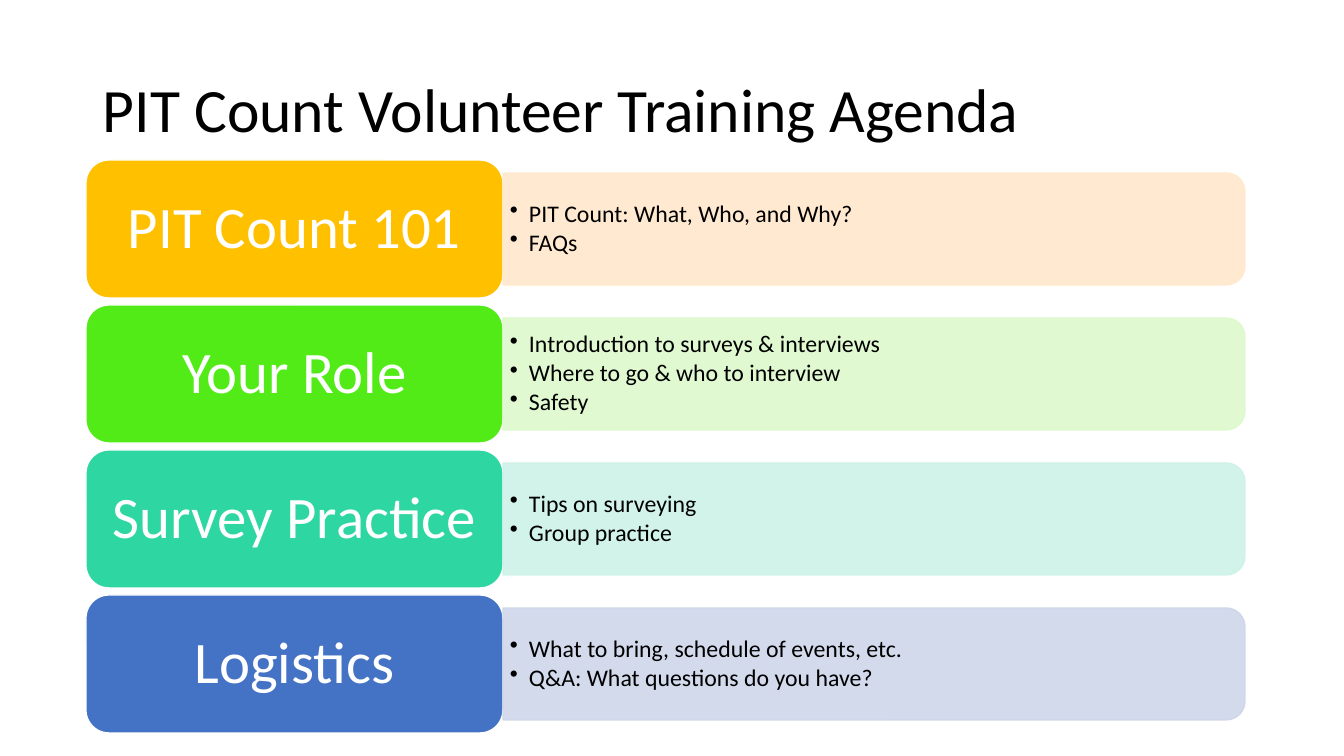
import pptx
import pptx.util
import pptx.dml.color
import pptx.enum.shapes
import pptx.enum.text
import pptx.oxml.ns
from lxml import etree

# Content
TITLE = "PIT Count Volunteer Training Agenda"
ROWS = [
    ("PIT Count 101", "gold", ["PIT Count: What, Who, and Why?", "FAQs"]),
    ("Your Role", "green", ["Introduction to surveys & interviews",
                            "Where to go & who to interview", "Safety"]),
    ("Survey Practice", "teal", ["Tips on surveying", "Group practice"]),
    ("Logistics", "blue", ["What to bring, schedule of events, etc.",
                           "Q&A: What questions do you have?"]),
]
COLORS = {
    "black": "000000", "white": "FFFFFF",
    "gold": "FFC000", "gold pale": "FFE8CC",
    "green": "53EB17", "green pale": "DDF9CC",
    "teal": "2ED7A1", "teal pale": "CDF2E7",
    "blue": "4472C4", "blue pale": "CFD6EA",
}
FONT = "Calibri"

# Layout in px
WIDE, HIGH = 1344, 756
TOP, STEP = 160, 145
LABEL_X, LABEL_W, LABEL_H = 86, 417, 138
BAR_X, BAR_W, BAR_H = LABEL_X + LABEL_W, 742, 112
LIST_W, LIST_H = 737, 100
INDENT = 19

KIND = pptx.enum.shapes.MSO_SHAPE
ALIGN = pptx.enum.text.PP_ALIGN


def px(n):
    return pptx.util.Emu(round(n * 914400 / 100.8))


def rgb(name):
    return pptx.dml.color.RGBColor.from_string(COLORS[name])


def add_box(kind, x, y, w, h, fill, line):
    box = slide.shapes.add_shape(kind, px(x), px(y), px(w), px(h))
    box.shadow.inherit = False
    box.fill.solid()
    box.fill.fore_color.rgb = rgb(fill)
    box.line.color.rgb = rgb(line)
    box.line.width = pptx.util.Pt(1)
    return box


def add_text(x, y, w, h):
    return slide.shapes.add_textbox(px(x), px(y), px(w), px(h))


def set_text(shape, lines, size, color, align, pad):
    frame = shape.text_frame
    frame.word_wrap = True
    frame.vertical_anchor = pptx.enum.text.MSO_ANCHOR.MIDDLE
    frame.margin_left = frame.margin_right = px(pad[0])
    frame.margin_top = frame.margin_bottom = px(pad[1])
    frame.text = "\n".join(lines)
    for para in frame.paragraphs:
        para.alignment = align
        para.line_spacing = 0.9
        font = para.runs[0].font
        font.name, font.size = FONT, pptx.util.Pt(size)
        font.color.rgb = rgb(color)
    return frame.paragraphs


def add_bullet(para):
    para.space_after = pptx.util.Pt(2.2)
    props = para._p.get_or_add_pPr()
    props.set("marL", str(px(INDENT)))
    props.set("indent", str(-px(INDENT)))
    mark = etree.SubElement(props, pptx.oxml.ns.qn("a:buChar"))
    mark.set("char", "•")


def set_alpha(part):
    # Applies 90% opacity to each solid colour in the shape properties
    for tint in part.iter(pptx.oxml.ns.qn("a:srgbClr")):
        alpha = etree.SubElement(tint, pptx.oxml.ns.qn("a:alpha"))
        alpha.set("val", "90000")


deck = pptx.Presentation()
deck.slide_width, deck.slide_height = px(WIDE), px(HIGH)
slide = deck.slides.add_slide(deck.slide_layouts[6])

# Title
set_text(add_text(93, 40, 1159, 146), [TITLE], 44, "black", ALIGN.LEFT, (10, 5))

# Agenda rows
for i, (name, color, points) in enumerate(ROWS):
    top = TOP + i * STEP
    mid = top + LABEL_H / 2
    pale = color + " pale"

    # Label
    label = add_box(KIND.ROUNDED_RECTANGLE, LABEL_X, top, LABEL_W, LABEL_H,
                    color, "white")
    set_text(label, [name], 42, "white", ALIGN.CENTER, (17, 9))

    # Bar, turned so that its round end points right
    bar = add_box(KIND.ROUND_2_SAME_RECTANGLE, BAR_X + (BAR_W - BAR_H) / 2,
                  mid - BAR_W / 2, BAR_H, BAR_W, pale, pale)
    bar.rotation = 90
    set_alpha(bar._element.spPr)

    # Points
    box = add_text(BAR_X, mid - LIST_H / 2, LIST_W, LIST_H)
    for para in set_text(box, points, 17, "black", ALIGN.LEFT, (7, 4)):
        add_bullet(para)

deck.save("out.pptx")
